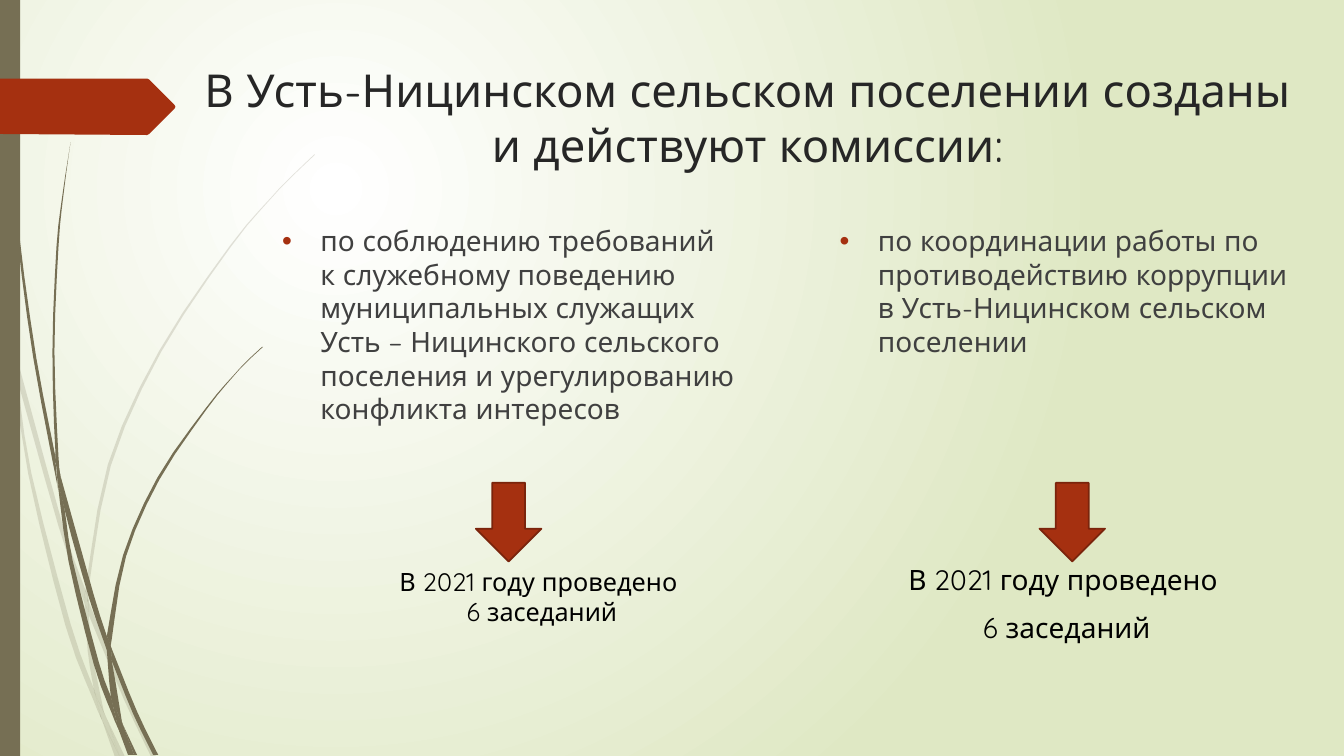
from pptx import Presentation
from pptx.dml.color import RGBColor
from pptx.enum.shapes import MSO_SHAPE
from pptx.enum.text import PP_ALIGN
from pptx.oxml import parse_xml
from pptx.oxml.ns import nsdecls, qn
from pptx.util import Inches, Pt

RECTANGLE, DOWN_ARROW = MSO_SHAPE.RECTANGLE, MSO_SHAPE.DOWN_ARROW
LEFT, CENTER = PP_ALIGN.LEFT, PP_ALIGN.CENTER

THEME = {
    "font": "Quicksand", "title": 32.4, "body": 20, "note": 18,
    "title_color": "262626", "body_color": "404040", "note_color": "000000",
    "accent": "A53010", "accent_line": "7A240C", "stem": "766F54",
    "glow": "FFFFFF", "ground": "DFE8C4",
}

TITLE = "В Усть-Ницинском сельском поселении созданы и действуют комиссии:"
CONDUCT = ("по соблюдению требований к служебному поведению муниципальных служащих "
           "Усть – Ницинского сельского поселения и урегулированию конфликта интересов")
COORDINATION = ("по координации работы по противодействию коррупции "
                "в Усть-Ницинском сельском поселении")
MEETINGS = ["В 2021 году проведено ", "6 заседаний"]

ARROW_LEFTS = [4.72, 10.31]
ARROW_TOP, ARROW_WIDTH, ARROW_HEIGHT = 4.79, 0.65, 0.78
UNITS_PER_INCH = 1000

PALE_BLADES = [
    ([(0.11, 3.5), (0.09, 3.22), (0, 2.82)], [(0, 2.99), (0.1, 3.44), (0.11, 3.5)]),
    ([(0.14, 3.45), (0.62, 5.2), (0.85, 5.86)],
     [(0.84, 5.99), (0.58, 5.22), (0.17, 3.76)]),
    ([(0.88, 5.96), (0.92, 6.07), (1.27, 6.92), (1.55, 7.51)],
     [(1.5, 7.51), (1.23, 6.94), (0.88, 6.1)]),
    ([(1.05, 7.11), (1.24, 7.51)], [(1.19, 7.51), (1.05, 7.11)]),
    ([(0.11, 3.5), (0.17, 3.76), (0.31, 4.69), (0.7, 6.19), (0.93, 6.83)],
     [(0.99, 7.07), (1.01, 7.14), (0.92, 6.93), (0.65, 6.21), (0.28, 4.7), (0.11, 3.5)]),
    ([(0.84, 5.99), (0.87, 6.46), (0.93, 6.83), (0.96, 6.92), (1.05, 7.11)],
     [(1.03, 7.06), (0.91, 6.46), (0.88, 6.1), (0.84, 5.99)]),
    ([(0.88, 5.96), (0.88, 5.84), (1.1, 4.62), (1.6, 3.49), (2.29, 2.45), (2.68, 1.98),
      (2.9, 1.75), (3.12, 1.54)],
     [(3.12, 1.53), (2.89, 1.75), (2.68, 1.97), (2.28, 2.44), (1.58, 3.48), (1.07, 4.61),
      (0.85, 5.84), (0.85, 5.86)]),
    ([(1.01, 7.14), (1.14, 7.51)], [(1.19, 7.51), (1.01, 7.14)]),
    ([(0.88, 6.1), (0.88, 5.96), (0.85, 5.86)], [(0.84, 5.99), (0.88, 6.08)]),
    ([(0.93, 6.83), (0.99, 7.07), (1.01, 7.14), (1.19, 7.51)],
     [(1.19, 7.51), (1.05, 7.11), (0.96, 6.92), (0.93, 6.83)]),
]
DARK_BLADES = [
    ([(0.03, 0), (0.04, 0.48), (0.07, 1.1), (0.17, 2.33), (0.33, 3.55), (0.56, 4.77),
      (0.57, 4.81)],
     [(0.55, 4.57), (0.55, 4.53), (0.36, 3.55), (0.19, 2.32), (0.08, 1.09), (0.05, 0.48),
      (0.04, 0)]),
    ([(0.6, 4.72), (0.93, 5.9), (1.06, 6.31)],
     [(1.06, 6.45), (0.88, 5.92), (0.64, 5.05), (0.6, 4.72)]),
    ([(1.1, 6.41), (1.13, 6.49), (1.36, 7.06), (1.57, 7.49)],
     [(1.52, 7.49), (1.32, 7.08), (1.11, 6.56)]),
    ([(0.57, 4.77), (0.64, 5.05), (0.72, 5.56), (0.98, 6.57), (1.1, 6.91)],
     [(1.16, 7.17), (1.17, 7.22), (1.11, 7.08), (0.93, 6.59), (0.68, 5.57), (0.57, 4.77)]),
    ([(0.6, 4.72), (0.58, 4.53), (0.54, 3.49), (0.58, 2.45), (0.63, 1.93), (0.7, 1.41)],
     [(0.7, 1.41), (0.62, 1.93), (0.56, 2.45), (0.52, 3.49), (0.55, 4.49), (0.6, 4.72)]),
    ([(1.22, 7.19), (1.36, 7.49)], [(1.33, 7.49), (1.22, 7.19)]),
    ([(0.55, 4.49), (0.6, 4.72), (0.64, 5.05)], [(0.57, 4.77), (0.55, 4.53)]),
    ([(1.1, 6.41), (1.11, 6.33), (1.25, 5.52), (1.58, 4.76), (2.05, 4.06), (2.31, 3.74),
      (2.45, 3.59), (2.61, 3.44)],
     [(2.6, 3.44), (2.45, 3.58), (2.31, 3.73), (2.04, 4.05), (1.56, 4.74), (1.22, 5.51),
      (1.06, 6.31)]),
    ([(1.17, 7.22), (1.27, 7.49)], [(1.31, 7.49), (1.17, 7.22)]),
    ([(1.06, 6.45), (1.1, 6.91), (1.16, 7.06), (1.22, 7.19)],
     [(1.21, 7.16), (1.11, 6.56), (1.06, 6.45)]),
    ([(1.06, 6.31), (1.1, 6.41), (1.11, 6.56)], [(1.06, 6.45), (1.06, 6.33)]),
    ([(1.1, 6.91), (1.16, 7.17), (1.17, 7.22), (1.3, 7.49)],
     [(1.33, 7.49), (1.22, 7.19), (1.16, 7.06), (1.1, 6.91)]),
]
POINTER = [(0, 0.78), (1.46, 0.78), (1.48, 0.79), (1.73, 1.04), (1.74, 1.06),
           (1.73, 1.08), (1.48, 1.33), (1.46, 1.34), (0, 1.33)]


def color(name):
    return RGBColor.from_string(THEME[name])


def smooth(edge, steps=3):
    if len(edge) == 2:
        return edge
    padded = [edge[0], *edge, edge[-1]]
    points = [edge[0]]
    for before, start, end, after in zip(padded, padded[1:], padded[2:], padded[3:]):
        for step in range(1, steps + 1):
            t = step / steps
            points.append(tuple(
                0.5 * (2 * b + (c - a) * t + (2 * a - 5 * b + 4 * c - d) * t ** 2
                       + (3 * b - a - 3 * c + d) * t ** 3)
                for a, b, c, d in zip(before, start, end, after)))
    return points


def paint(shape, fill, line=None, alpha=None):
    shape.shadow.inherit = False
    shape.fill.solid()
    shape.fill.fore_color.rgb = color(fill)
    if alpha:
        tone = shape.element.spPr.find(".//" + qn("a:srgbClr"))
        tone.append(parse_xml(f'<a:alpha {nsdecls("a")} val="{alpha * 1000}"/>'))
    if line:
        shape.line.color.rgb = color(line)
        shape.line.width = Pt(1.25)
    else:
        shape.line.fill.background()


def add_outline(page, points, fill, alpha=None):
    units = [(round(x * UNITS_PER_INCH), round(y * UNITS_PER_INCH)) for x, y in points]
    units = list(dict.fromkeys(units))
    builder = page.shapes.build_freeform(*units[0], scale=Inches(1) / UNITS_PER_INCH)
    builder.add_line_segments(units[1:], close=True)
    paint(builder.convert_to_shape(), fill, alpha=alpha)


def add_box(page, left, top, width, height):
    box = page.shapes.add_textbox(Inches(left), Inches(top), Inches(width), Inches(height))
    box.text_frame.word_wrap = True
    return box.text_frame


def write(frame, text, size, tone, align=LEFT, before=0, bullet=False):
    para = frame.paragraphs[0]
    if para.runs:
        para = frame.add_paragraph()
    para.alignment = align
    para.space_before = Pt(before)
    span = para.add_run()
    span.text = text
    span.font.name = THEME["font"]
    span.font.size = Pt(THEME[size])
    span.font.color.rgb = color(tone)
    if bullet:
        props = para._p.get_or_add_pPr()
        props.set("marL", str(Inches(0.38)))
        props.set("indent", str(-Inches(0.38)))
        for tag in (f'buClr {nsdecls("a")}><a:srgbClr val="{THEME["accent"]}"/></a:buClr',
                    f'buFont {nsdecls("a")} typeface="Arial"/',
                    f'buChar {nsdecls("a")} char="•"/'):
            props.append(parse_xml(f"<a:{tag}>"))


def paint_background(page):
    fill = page.background.fill
    fill.gradient()
    for stop, name in zip(fill.gradient_stops, ("glow", "ground")):
        stop.color.rgb = color(name)
    linear = page.element.find(".//" + qn("a:lin"))
    linear.getparent().replace(linear, parse_xml(
        f'<a:path {nsdecls("a")} path="circle">'
        '<a:fillToRect l="50000" t="50000" r="100000" b="100000"/></a:path>'))


def main():
    deck = Presentation()
    deck.slide_width, deck.slide_height = Inches(13.33), Inches(7.5)
    page = deck.slides.add_slide(deck.slide_layouts[6])
    paint_background(page)

    for blades, alpha in ((PALE_BLADES, 20), (DARK_BLADES, None)):
        for out, back in blades:
            add_outline(page, smooth(out) + smooth(back), "stem", alpha)
    strip = page.shapes.add_shape(RECTANGLE, 0, 0, Inches(0.2), deck.slide_height)
    paint(strip, "stem")
    add_outline(page, POINTER, "accent")

    write(add_box(page, 1.9, 0.57, 11.03, 1.22), TITLE, "title", "title_color", CENTER)
    right = add_box(page, 8.23, 2.17, 4.7, 4.76)
    write(right, COORDINATION, "body", "body_color", before=10, bullet=True)
    for text, before in zip(MEETINGS, (146, 10)):
        write(right, text, "body", "note_color", CENTER, before)
    left = add_box(page, 2.7, 2.17, 4.69, 2.37)
    write(left, CONDUCT, "body", "body_color", before=10, bullet=True)

    for arrow_left in ARROW_LEFTS:
        arrow = page.shapes.add_shape(DOWN_ARROW, Inches(arrow_left), Inches(ARROW_TOP),
                                      Inches(ARROW_WIDTH), Inches(ARROW_HEIGHT))
        paint(arrow, "accent", "accent_line")
    note = add_box(page, 3.04, 5.57, 4.67, 1.01)
    for text in MEETINGS:
        write(note, text, "note", "note_color", CENTER)

    deck.save("out.pptx")


if __name__ == "__main__":
    main()
